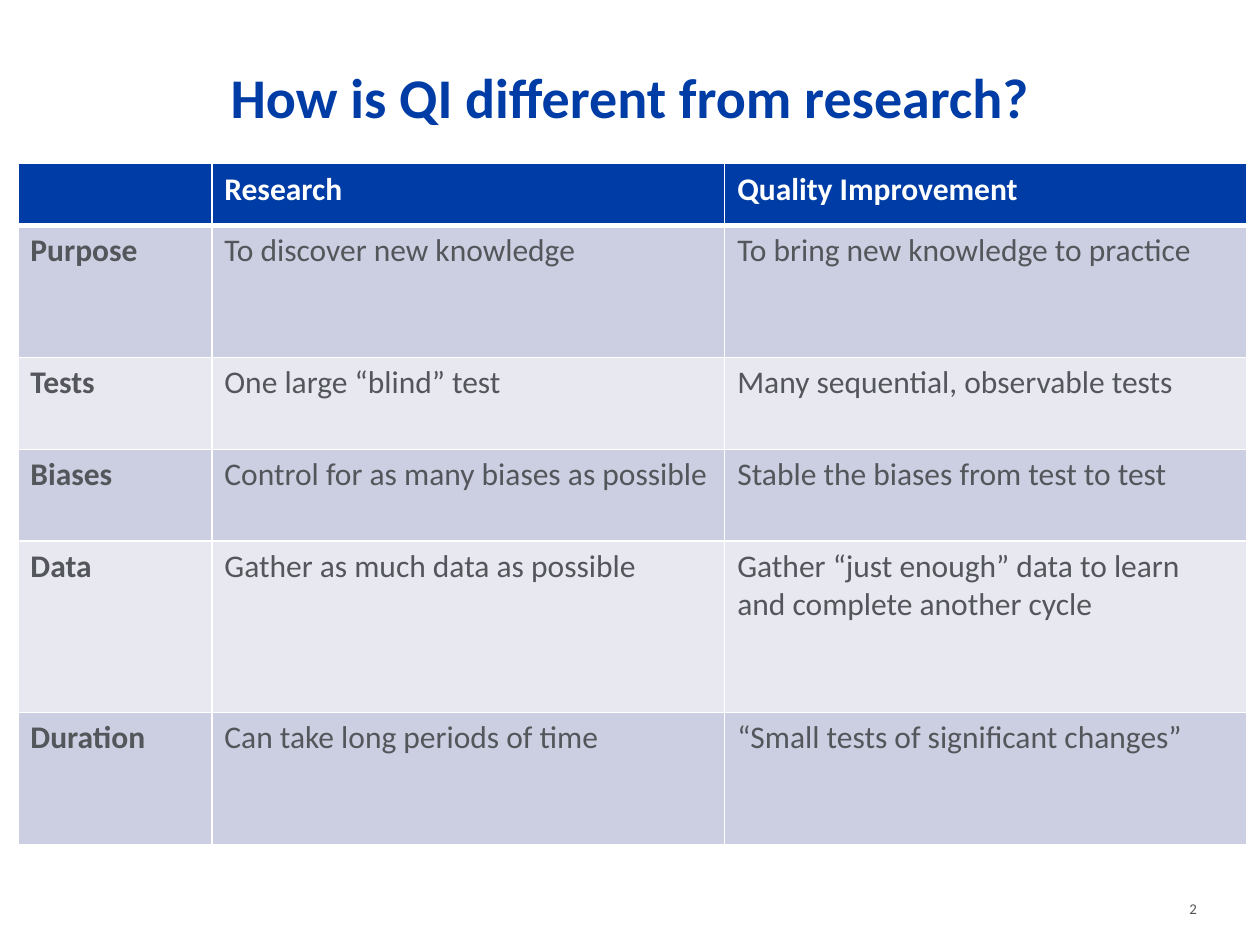
from lxml.etree import SubElement
from pptx import Presentation
from pptx.dml.color import RGBColor
from pptx.enum.text import MSO_ANCHOR as Anchor, PP_ALIGN as Align
from pptx.oxml.ns import qn
from pptx.util import Cm, Pt

BLUE = RGBColor(0x00, 0x3C, 0xA5)
GREY = RGBColor(0x53, 0x56, 0x5A)
WHITE = RGBColor(0xFF, 0xFF, 0xFF)
BANDS = [RGBColor(0xCC, 0xCE, 0xE1), RGBColor(0xE7, 0xE8, 0xF0)]

# Content
TITLE = "How is QI different from research?"
PAGE_NUMBER = "2"
ROWS = [
    ("", "Research", "Quality Improvement"),
    ("Purpose", "To discover new knowledge", "To bring new knowledge to practice"),
    ("Tests", "One large “blind” test", "Many sequential, observable tests"),
    ("Biases", "Control for as many biases as possible",
     "Stable the biases from test to test"),
    ("Data", "Gather as much data as possible",
     "Gather “just enough” data to learn and complete another cycle"),
    ("Duration", "Can take long periods of time",
     "“Small tests of significant changes”"),
]
COLUMN_WIDTHS = [3.91, 10.34, 10.52]
ROW_HEIGHTS = [1.24, 2.67, 1.85, 1.85, 3.45, 2.67]


def write(frame, text, size=18, color=GREY, bold=False, align=Align.LEFT):
    para = frame.paragraphs[0]
    para.alignment = align
    span = para.add_run()
    span.text = text
    font = span.font
    font.name, font.size, font.bold = "Calibri", Pt(size), bold
    font.color.rgb = color


def add_text(page, text, left, top, width, height, anchor=Anchor.TOP, **style):
    box = page.shapes.add_textbox(Cm(left), Cm(top), Cm(width), Cm(height))
    frame = box.text_frame
    frame.word_wrap = True
    frame.vertical_anchor = anchor
    frame.margin_left = frame.margin_right = frame.margin_top = frame.margin_bottom = 0
    write(frame, text, **style)


def set_borders(cell, **widths):
    properties = cell._tc.get_or_add_tcPr()
    for index, (side, width) in enumerate(widths.items()):
        line = properties.makeelement(qn(f"a:ln{side}"), {"w": str(Pt(width))})
        fill = SubElement(line, qn("a:solidFill"))
        SubElement(fill, qn("a:srgbClr"), val=str(WHITE))
        properties.insert(index, line)  # borders come before the fill


def add_comparison(page, left, top):
    table = page.shapes.add_table(
        len(ROWS), len(COLUMN_WIDTHS), Cm(left), Cm(top),
        Cm(sum(COLUMN_WIDTHS)), Cm(sum(ROW_HEIGHTS))).table
    for column, width in zip(table.columns, COLUMN_WIDTHS):
        column.width = Cm(width)
    for r, (row, height, texts) in enumerate(zip(table.rows, ROW_HEIGHTS, ROWS)):
        row.height = Cm(height)
        header = r == 0
        for c, (cell, text) in enumerate(zip(row.cells, texts)):
            cell.fill.solid()
            cell.fill.fore_color.rgb = BLUE if header else BANDS[(r - 1) % 2]
            set_borders(cell, L=1, R=1, T=3 if r == 1 else 1, B=3 if header else 1)
            if text:
                write(cell.text_frame, text, color=WHITE if header else GREY,
                      bold=header or c == 0)


def main():
    deck = Presentation()
    deck.slide_width, deck.slide_height = Cm(25.4), Cm(19.05)
    page = deck.slides.add_slide(deck.slide_layouts[6])

    # Title, comparison table, page number
    add_text(page, TITLE, 1.27, 1.27, 22.86, 2.21,
             size=32, color=BLUE, bold=True, align=Align.CENTER)
    add_comparison(page, 0.36, 3.3)
    add_text(page, PAGE_NUMBER, 22.07, 17.7, 2.06, 0.79,
             anchor=Anchor.BOTTOM, size=8.5, align=Align.RIGHT)

    deck.save("out.pptx")


if __name__ == "__main__":
    main()
